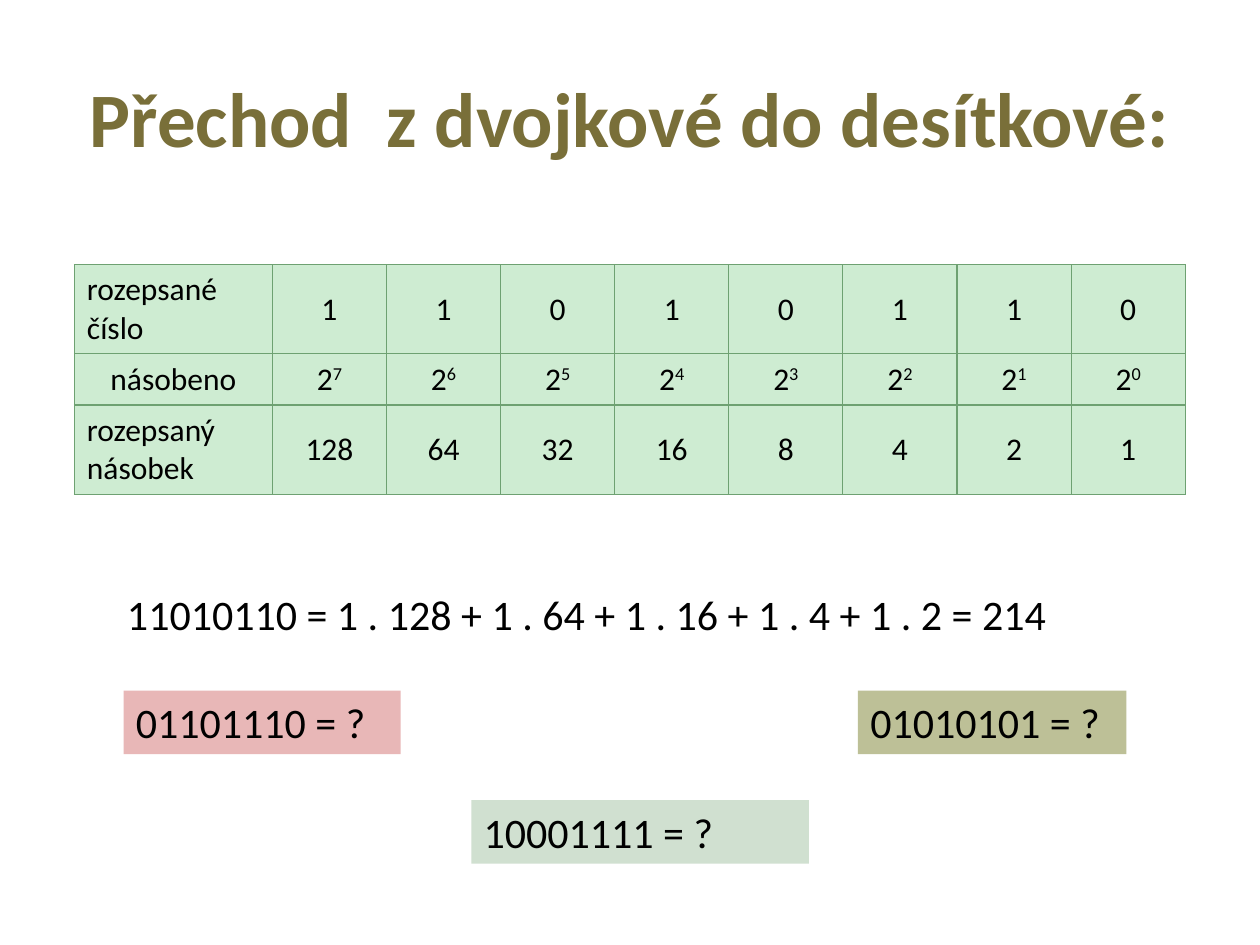
from lxml import etree
from pptx import Presentation
from pptx.dml.color import RGBColor
from pptx.enum.shapes import MSO_SHAPE
from pptx.enum.text import MSO_ANCHOR, MSO_AUTO_SIZE, PP_ALIGN
from pptx.oxml.ns import qn
from pptx.util import Pt

OLIVE = RGBColor(0x79, 0x6F, 0x39)
BLACK = RGBColor(0, 0, 0)
MINT = RGBColor(0xCE, 0xEC, 0xD2)
GREEN = RGBColor(0x6E, 0xA1, 0x72)
PINK = RGBColor(0xE8, 0xB7, 0xB7)
PALE_GREEN = RGBColor(0xD0, 0xE0, 0xD0)
KHAKI = RGBColor(0xBD, 0xC0, 0x97)

TITLE = "Přechod  z dvojkové do desítkové:"
BINARY = "11010110"
POWERS = range(len(BINARY) - 1, -1, -1)
SOLUTION = "11010110 = 1 . 128 + 1 . 64 + 1 . 16 + 1 . 4 + 1 . 2 = 214"

# Row label, label alignment, row height, (base, exponent) of each value
ROWS = [
    ("rozepsané číslo", PP_ALIGN.LEFT, 51, [(digit, "") for digit in BINARY]),
    ("násobeno", PP_ALIGN.CENTER, 29.2, [("2", str(n)) for n in POWERS]),
    ("rozepsaný násobek", PP_ALIGN.LEFT, 51, [(str(2 ** n), "") for n in POWERS]),
]
LABEL_WIDTH, VALUE_WIDTH = 113.2, 65.2
TABLE_LEFT, TABLE_TOP = 42.5, 151.2

# Text, left, top, width, fill
EXERCISES = [
    ("01101110 = ?", 70.6, 394.6, 158.4, PINK),
    ("10001111 = ?", 269.3, 457.2, 193, PALE_GREEN),
    ("01010101 = ?", 490.3, 394.6, 153.4, KHAKI),
]
LINE_HEIGHT = 36.3


def write(frame, text, superscript="", size=24, color=BLACK, bold=False,
          align=PP_ALIGN.LEFT, anchor=MSO_ANCHOR.TOP):
    frame.word_wrap = True
    frame.vertical_anchor = anchor
    paragraph = frame.paragraphs[0]
    paragraph.alignment = align
    for part in filter(None, (text, superscript)):
        run = paragraph.add_run()
        run.text = part
        run.font.name = "Calibri"
        run.font.size = Pt(size)
        run.font.bold = bold
        run.font.color.rgb = color
    if superscript:
        run.font._element.set("baseline", "30000")


def style_cell(cell):
    """Fill the cell and rule all four of its sides."""
    cell.fill.solid()
    cell.fill.fore_color.rgb = MINT
    properties = cell._tc.get_or_add_tcPr()
    for index, side in enumerate(("a:lnL", "a:lnR", "a:lnT", "a:lnB")):
        line = etree.Element(qn(side), w=str(Pt(0.75)))
        fill = etree.SubElement(line, qn("a:solidFill"))
        etree.SubElement(fill, qn("a:srgbClr"), val=str(GREEN))
        properties.insert(index, line)


def add_conversion_table(slide):
    values = len(BINARY)
    table = slide.shapes.add_table(
        len(ROWS), values + 1, Pt(TABLE_LEFT), Pt(TABLE_TOP),
        Pt(LABEL_WIDTH + values * VALUE_WIDTH), Pt(sum(row[2] for row in ROWS))).table
    for index, column in enumerate(table.columns):
        column.width = Pt(VALUE_WIDTH if index else LABEL_WIDTH)
    for row, (label, label_align, height, numbers) in zip(table.rows, ROWS):
        row.height = Pt(height)
        entries = [(label, "", label_align)]
        entries += [(base, exponent, PP_ALIGN.CENTER) for base, exponent in numbers]
        for cell, (text, exponent, align) in zip(row.cells, entries):
            style_cell(cell)
            cell.vertical_anchor = MSO_ANCHOR.MIDDLE
            write(cell.text_frame, text, exponent, size=18, align=align,
                  anchor=MSO_ANCHOR.MIDDLE)


def add_exercise(slide, text, left, top, width, fill):
    box = slide.shapes.add_shape(MSO_SHAPE.RECTANGLE, Pt(left), Pt(top),
                                 Pt(width), Pt(LINE_HEIGHT))
    box.shadow.inherit = False
    box.fill.solid()
    box.fill.fore_color.rgb = fill
    box.line.fill.background()
    write(box.text_frame, text)
    box.text_frame.auto_size = MSO_AUTO_SIZE.SHAPE_TO_FIT_TEXT


def main():
    deck = Presentation()
    deck.slide_width, deck.slide_height = Pt(720), Pt(540)
    slide = deck.slides.add_slide(deck.slide_layouts[6])

    title = slide.shapes.add_textbox(Pt(36), Pt(21.6), Pt(648), Pt(90))
    write(title.text_frame, TITLE, size=44, color=OLIVE, bold=True,
          align=PP_ALIGN.CENTER, anchor=MSO_ANCHOR.MIDDLE)

    add_conversion_table(slide)

    solution = slide.shapes.add_textbox(Pt(65.5), Pt(332.6), Pt(584), Pt(LINE_HEIGHT))
    write(solution.text_frame, SOLUTION)
    solution.text_frame.auto_size = MSO_AUTO_SIZE.SHAPE_TO_FIT_TEXT

    for exercise in EXERCISES:
        add_exercise(slide, *exercise)

    deck.save("out.pptx")


if __name__ == "__main__":
    main()
